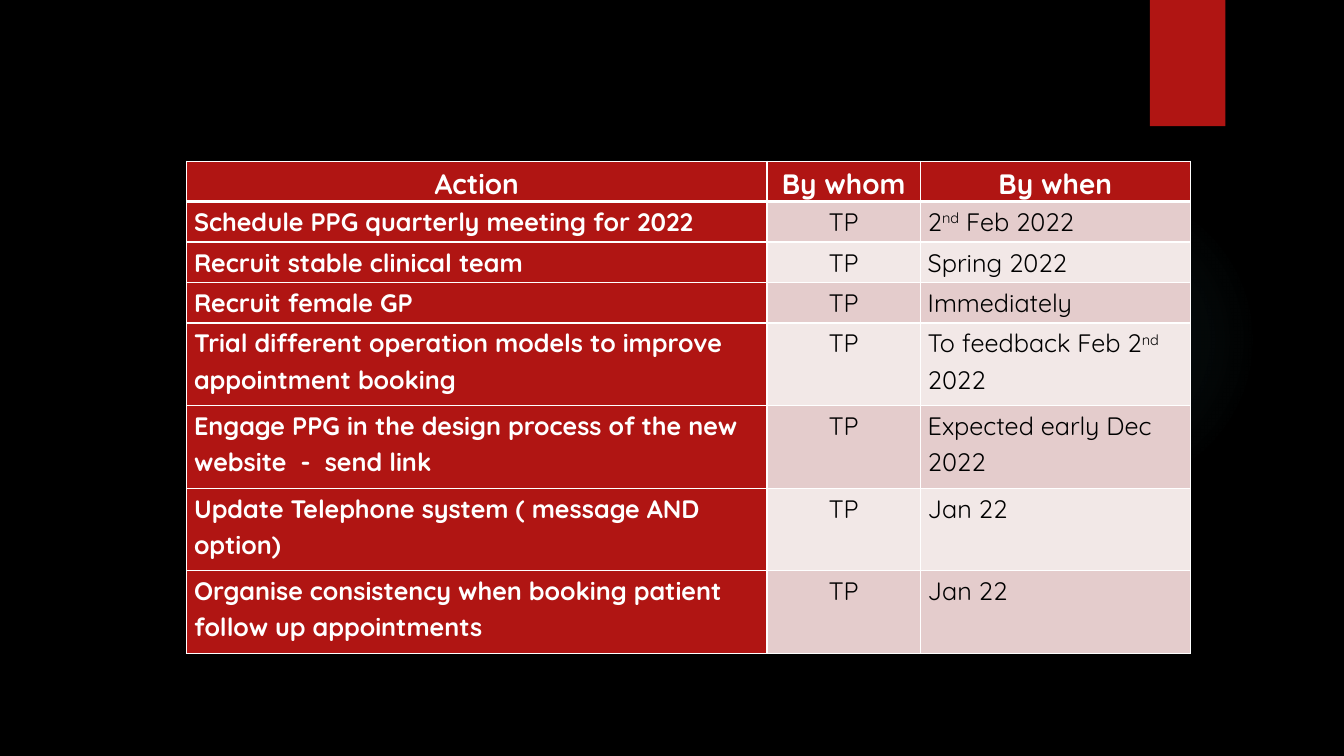
from lxml.etree import SubElement
from pptx import Presentation
from pptx.dml.color import RGBColor
from pptx.enum.shapes import MSO_SHAPE
from pptx.enum.text import PP_ALIGN
from pptx.oxml.ns import qn
from pptx.util import Cm, Pt

COLOURS = {
    "background": "000000",
    "red": "B01513",
    "white": "FFFFFF",
    "black": "000000",
    "dark_band": "E4CCCC",
    "light_band": "F2E8E7",
    "glow": "50B9C1",
}
FONT = "Quicksand"
HEADINGS = ["Action", "By whom", "By when"]
ACTIONS = [
    ("Schedule PPG quarterly meeting for 2022", "TP", ["2", "nd", " Feb 2022"]),
    ("Recruit stable clinical team", "TP", ["Spring 2022"]),
    ("Recruit female GP", "TP", ["Immediately"]),
    ("Trial different operation models to improve appointment booking", "TP",
     ["To feedback Feb 2", "nd", " 2022"]),
    ("Engage PPG in the design process of the new website  -  send link", "TP",
     ["Expected early Dec 2022"]),
    ("Update Telephone system ( message AND option)", "TP", ["Jan 22"]),
    ("Organise consistency when booking patient follow up appointments", "TP", ["Jan 22"]),
]
COLUMN_WIDTHS = [14.63, 3.86, 6.81]
SHORT_ROW, TALL_ROW = 1.02, 2.08
ROW_HEIGHTS = [SHORT_ROW] * 4 + [TALL_ROW] * 4


def colour(name):
    return RGBColor.from_string(COLOURS[name])


def add_plain_shape(page, kind, left, top, width, height):
    shape = page.shapes.add_shape(kind, Cm(left), Cm(top), Cm(width), Cm(height))
    shape.shadow.inherit = False
    shape.line.fill.background()
    return shape


def add_glow(page, left, top, size):
    glow = add_plain_shape(page, MSO_SHAPE.OVAL, left, top, size, size)
    glow.fill.gradient()
    gradient = glow.element.spPr.find(qn("a:gradFill"))
    for child in list(gradient):
        gradient.remove(child)
    stops = SubElement(gradient, qn("a:gsLst"))
    for position, alpha in [(0, 7), (36, 6), (69, 0)]:
        stop = SubElement(stops, qn("a:gs"), pos=str(position * 1000))
        tint = SubElement(stop, qn("a:srgbClr"), val=COLOURS["glow"])
        SubElement(tint, qn("a:alpha"), val=str(alpha * 1000))
    circle = SubElement(gradient, qn("a:path"), path="circle")
    SubElement(circle, qn("a:fillToRect"), l="50000", t="50000", r="50000", b="50000")


def add_ribbon(page, left, top, width, height):
    ribbon = add_plain_shape(page, MSO_SHAPE.RECTANGLE, left, top, width, height)
    ribbon.fill.solid()
    ribbon.fill.fore_color.rgb = colour("red")


def set_borders(cell, top, bottom):
    properties = cell._tc.get_or_add_tcPr()
    for side, width in [("L", 1), ("R", 1), ("T", top), ("B", bottom)]:
        line = SubElement(properties, qn(f"a:ln{side}"), w=str(Pt(width)))
        fill = SubElement(line, qn("a:solidFill"))
        SubElement(fill, qn("a:srgbClr"), val=COLOURS["white"])


def fill_cell(cell, texts, fill, size, strong, centred):
    cell.margin_left = cell.margin_right = Cm(0.19)
    cell.margin_top = cell.margin_bottom = 0
    cell.fill.solid()
    cell.fill.fore_color.rgb = colour(fill)
    para = cell.text_frame.paragraphs[0]
    para.alignment = PP_ALIGN.CENTER if centred else PP_ALIGN.LEFT
    para.line_spacing = 1.15
    para.space_after = Pt(10)
    for text in texts:
        span = para.add_run()
        span.text = text
        span.font.name = FONT
        span.font.size = Pt(size)
        span.font.bold = strong
        span.font.color.rgb = colour("white" if strong else "black")
        if text == "nd":
            span.font._element.set("baseline", "30000")


def add_action_table(page, left, top):
    frame = page.shapes.add_table(
        len(ROW_HEIGHTS), len(COLUMN_WIDTHS), Cm(left), Cm(top),
        Cm(sum(COLUMN_WIDTHS)), Cm(sum(ROW_HEIGHTS)))
    table = frame.table
    for column, width in zip(table.columns, COLUMN_WIDTHS):
        column.width = Cm(width)
    for row, height in zip(table.rows, ROW_HEIGHTS):
        row.height = Cm(height)
    for index, heading in enumerate(HEADINGS):
        cell = table.cell(0, index)
        set_borders(cell, 1, 3)
        fill_cell(cell, [heading], "red", 20, True, True)
    for number, (action, person, date) in enumerate(ACTIONS, 1):
        band = "dark_band" if number % 2 else "light_band"
        for index, texts in enumerate([[action], [person], date]):
            cell = table.cell(number, index)
            set_borders(cell, 3 if number == 1 else 1, 1)
            fill_cell(cell, texts, "red" if index == 0 else band, 18, index == 0, index == 1)


def build_action_page(deck):
    page = deck.slides.add_slide(deck.slide_layouts[6])
    page.background.fill.solid()
    page.background.fill.fore_color.rgb = colour("background")
    add_glow(page, 23.9, 4.65, 7.82)
    add_ribbon(page, 28.98, 0, 1.9, 3.18)
    add_action_table(page, 4.7, 4.06)


def main():
    deck = Presentation()
    deck.slide_width = Cm(33.87)
    deck.slide_height = Cm(19.05)
    build_action_page(deck)
    deck.save("out.pptx")


if __name__ == "__main__":
    main()
